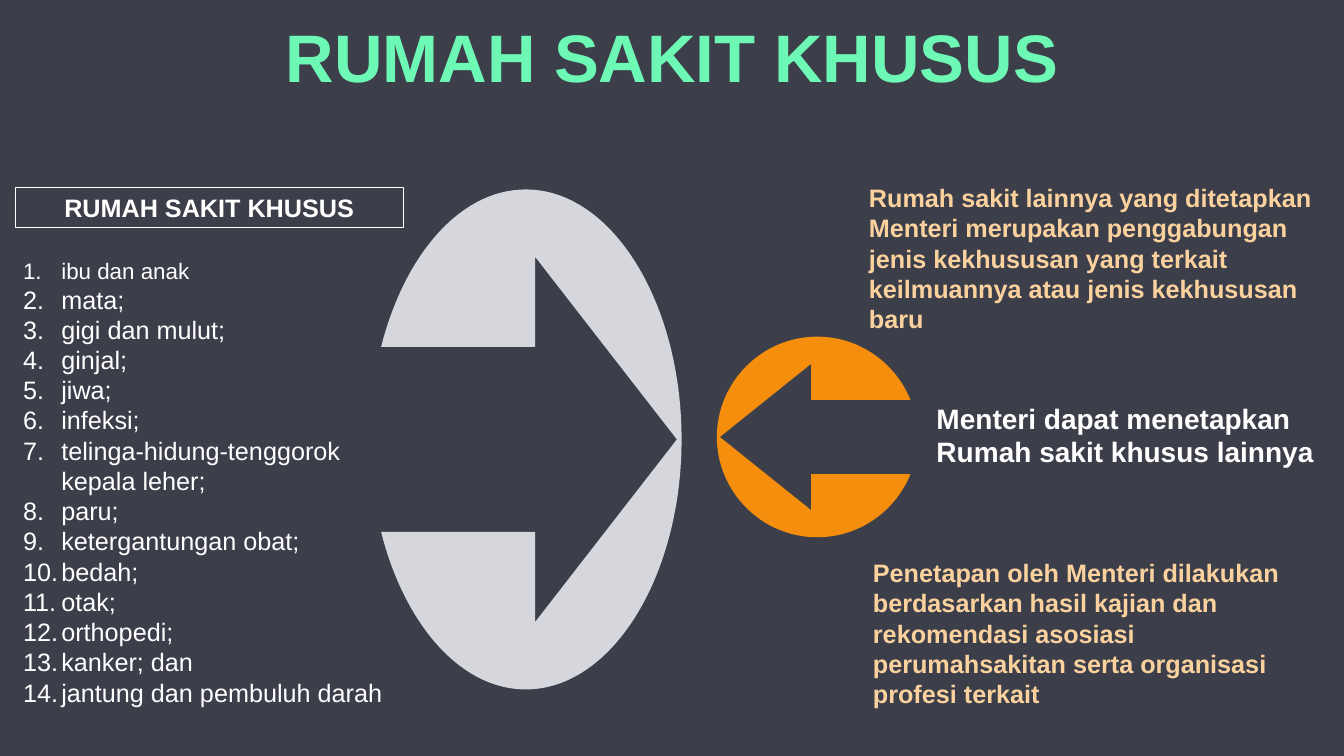
"""Build the slide on special hospitals (Rumah Sakit Khusus)."""
from lxml import etree
from pptx import Presentation
from pptx.dml import color
from pptx.enum import shapes, text
from pptx.oxml import ns
from pptx.util import Inches, Pt


def rgb(value):
    return color.RGBColor.from_string(value)


def write(box, lines, size, hue, bold=True, align=None):
    frame = box.text_frame
    frame.word_wrap = True
    frame.auto_size = text.MSO_AUTO_SIZE.SHAPE_TO_FIT_TEXT
    frame.text = "\n".join(lines)
    for para in frame.paragraphs:
        para.alignment = align
        for span in para.runs:
            span.font.name = "Arial"
            span.font.size = Pt(size)
            span.font.bold = bold
            span.font.color.rgb = rgb(hue)
    return frame


deck = Presentation()
deck.slide_width, deck.slide_height = Inches(13.33), Inches(7.5)
page = deck.slides.add_slide(deck.slide_layouts[6])
page.background.fill.solid()
page.background.fill.fore_color.rgb = rgb("3C3E4A")

title = page.shapes.add_textbox(Inches(0), Inches(0.18), Inches(13.33), Inches(0.84))
title_frame = write(title, ["RUMAH SAKIT KHUSUS"], 48, "6DF9B5", align=text.PP_ALIGN.CENTER)
title_frame.auto_size = text.MSO_AUTO_SIZE.NONE
title_frame.vertical_anchor = text.MSO_ANCHOR.MIDDLE
title_frame.paragraphs[0].line_spacing = 0.9
title_frame.paragraphs[0].space_before = Pt(10)

CUT, SHAFT, HEAD, NECK, TIP = 0.93, 0.37, 0.73, 0.06, 0.97
outline = [
    (0, -1),
    (0.55, -1), (1, -0.55), (1, 0),
    (1, 0.55), (0.55, 1), (0, 1),
    (-0.42, 1), (-0.78, 0.74), (-CUT, SHAFT),
    (NECK, SHAFT), (NECK, HEAD), (TIP, 0), (NECK, -HEAD), (NECK, -SHAFT), (-CUT, -SHAFT),
    (-0.78, -0.74), (-0.42, -1), (0, -1),
]
curve_starts = [0, 3, 6, 15]
ellipses = [
    (3.78, 1.88, 2.98, 4.96, 0, "D5D7DD"),
    (7.11, 3.34, 1.92, 1.99, 180, "F48E0C"),
]
for left, top, width, height, turn, fill in ellipses:
    points = [
        (Inches(left + width * (x + CUT) / (1 + CUT)), Inches(top + height * (y + 1) / 2))
        for x, y in outline
    ]
    builder = page.shapes.build_freeform(*points[0])
    builder.add_line_segments(points[1:], close=True)
    cutout = builder.convert_to_shape()
    segments = list(cutout._element.iter(ns.qn("a:lnTo")))
    for start in curve_starts:
        curve = etree.Element(ns.qn("a:cubicBezTo"))
        segments[start].addprevious(curve)
        for segment in segments[start:start + 3]:
            curve.append(segment[0])
            segment.getparent().remove(segment)
    cutout.rotation = turn
    cutout.shadow.inherit = False
    cutout.fill.solid()
    cutout.fill.fore_color.rgb = rgb(fill)
    cutout.line.fill.background()

panel = page.shapes.add_group_shape()
notes = [
    (8.56, 5.48, 4.46, 1.62, 18, "FBD29E",
     "Penetapan oleh Menteri dilakukan berdasarkan hasil kajian dan rekomendasi "
     "asosiasi perumahsakitan serta organisasi profesi terkait"),
    (8.52, 1.76, 4.62, 1.62, 18, "FBD29E",
     "Rumah sakit lainnya yang ditetapkan Menteri merupakan penggabungan jenis "
     "kekhususan yang terkait keilmuannya atau jenis kekhususan baru"),
    (9.19, 3.93, 3.96, 0.77, 20, "FFFFFF",
     "Menteri dapat menetapkan Rumah sakit khusus lainnya"),
]
for left, top, width, height, size, hue, wording in notes:
    note = page.shapes.add_textbox(Inches(left), Inches(top), Inches(width), Inches(height))
    write(note, [wording], size, hue)

hospital_types = [
    "ibu dan anak", "mata;", "gigi dan mulut;", "ginjal;", "jiwa;", "infeksi;",
    "telinga-hidung-tenggorok kepala leher;", "paru;", "ketergantungan obat;",
    "bedah;", "otak;", "orthopedi;", "kanker; dan", "jantung dan pembuluh darah",
]
type_list = panel.shapes.add_textbox(Inches(0.13), Inches(2.5), Inches(3.88), Inches(4.61))
list_frame = write(type_list, hospital_types, 18, "FFFFFF", bold=False)
list_frame.paragraphs[0].runs[0].font.size = Pt(16)
for para in list_frame.paragraphs:
    properties = para._p.get_or_add_pPr()
    properties.set("marL", str(Inches(0.38)))
    properties.set("indent", str(-Inches(0.38)))
    etree.SubElement(properties, ns.qn("a:buFont"), typeface="+mj-lt")
    etree.SubElement(properties, ns.qn("a:buAutoNum"), type="arabicPeriod")

heading = panel.shapes.add_shape(
    shapes.MSO_SHAPE.RECTANGLE, Inches(0.15), Inches(1.86), Inches(3.85), Inches(0.4))
heading.shadow.inherit = False
heading.fill.background()
heading.line.color.rgb = rgb("FFFFFF")
heading.line.width = Pt(0.75)
write(heading, ["RUMAH SAKIT KHUSUS"], 18, "FFFFFF", align=text.PP_ALIGN.CENTER)

deck.save("out.pptx")
